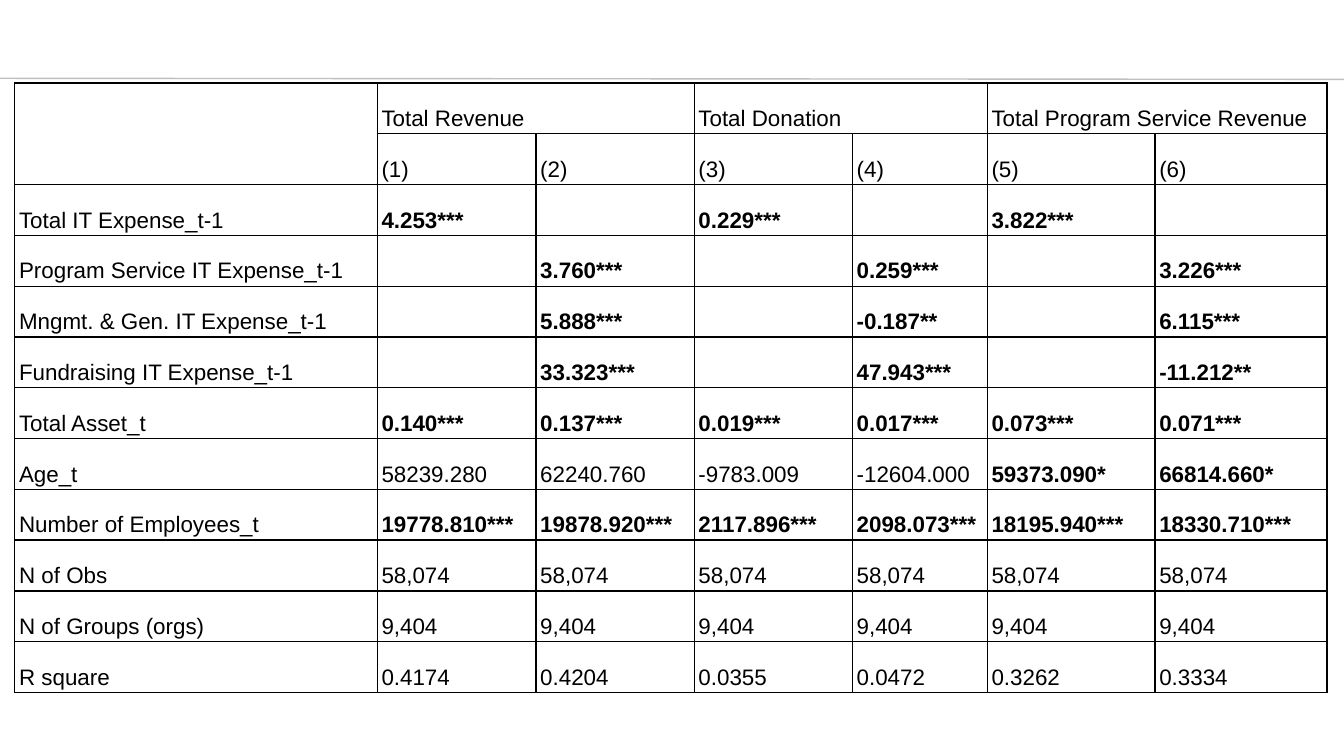
from lxml import etree
from pptx import Presentation
from pptx.dml.color import RGBColor
from pptx.enum import shapes, text
from pptx.oxml import ns
from pptx.util import Cm, Pt

# Content
heads = ["Total Revenue", "Total Donation", "Total Program Service Revenue"]
body = [
    ["", "(1)", "(2)", "(3)", "(4)", "(5)", "(6)"],
    ["Total IT Expense_t-1", "4.253***", "", "0.229***", "", "3.822***", ""],
    ["Program Service IT Expense_t-1", "", "3.760***", "", "0.259***", "", "3.226***"],
    ["Mngmt. & Gen. IT Expense_t-1", "", "5.888***", "", "-0.187**", "", "6.115***"],
    ["Fundraising IT Expense_t-1", "", "33.323***", "", "47.943***", "", "-11.212**"],
    ["Total Asset_t", "0.140***", "0.137***", "0.019***", "0.017***", "0.073***", "0.071***"],
    ["Age_t", "58239.280", "62240.760", "-9783.009", "-12604.000", "59373.090*", "66814.660*"],
    ["Number of Employees_t", "19778.810***", "19878.920***", "2117.896***",
     "2098.073***", "18195.940***", "18330.710***"],
    ["N of Obs"] + ["58,074"] * 6,
    ["N of Groups (orgs)"] + ["9,404"] * 6,
    ["R square", "0.4174", "0.4204", "0.0355", "0.0472", "0.3262", "0.3334"],
]
rows = [[""] + [part for head in heads for part in (head, "")]] + body
wide = [6.85, 3, 2.99, 2.99, 2.55, 3.17, 3.25]
high = 0.96
tight = ("Total Asset_t", "N of Obs")   # rows with single line spacing
names = [row[0] for row in rows]
split = names.index("N of Obs")         # heavier rule above this row


def color(code):
    return RGBColor.from_string(code)


def edge(cell, side, size):
    line = etree.SubElement(cell._tc.get_or_add_tcPr(), ns.qn("a:ln" + side), w=str(Pt(size)))
    fill = etree.SubElement(line, ns.qn("a:solidFill"))
    etree.SubElement(fill, ns.qn("a:srgbClr"), val="000000")


def write(cell, words, space):
    para = cell.text_frame.paragraphs[0]
    para.line_spacing = space
    run = para.add_run()
    run.text = words
    font = run.font
    font.name, font.size = "Arial", Pt(12)
    font.bold = words.endswith("*")
    font.color.rgb = color("000000")


deck = Presentation()
deck.slide_width, deck.slide_height = Cm(25.4), Cm(14.29)
slide = deck.slides.add_slide(deck.slide_layouts[6])

# Rule under the title area
rule = slide.shapes.add_connector(
    shapes.MSO_CONNECTOR.STRAIGHT, 0, Cm(1.48), Cm(25.4), Cm(1.5))
rule.line.color.rgb = color("BFBFBF")
rule.line.width = Pt(0.75)
etree.SubElement(rule._element.spPr, ns.qn("a:effectLst"))

# Regression table
frame = slide.shapes.add_table(
    len(rows), len(wide), Cm(0.28), Cm(1.57), Cm(sum(wide)), Cm(high * len(rows)))
table = frame.table
table.first_row = table.horz_banding = False
for col, width in zip(table.columns, wide):
    col.width = Cm(width)
for r, row in enumerate(rows):
    table.rows[r].height = Cm(high)
    for c, words in enumerate(row):
        cell = table.cell(r, c)
        cell.vertical_anchor = text.MSO_ANCHOR.BOTTOM
        cell.margin_left = cell.margin_right = Cm(0.08)
        cell.margin_top = cell.margin_bottom = Cm(0.05)
        for side in "LRTB":
            heavy = (side, r) in (("B", split - 1), ("T", split))
            edge(cell, side, 1.5 if heavy else 0.75)
        cell.fill.background()
        if words:
            write(cell, words, 1.0 if row[0] in tight else 1.15)

# Merged heading cells
table.cell(0, 0).merge(table.cell(1, 0))
for c in range(1, len(wide), 2):
    table.cell(0, c).merge(table.cell(0, c + 1))

deck.save("out.pptx")
